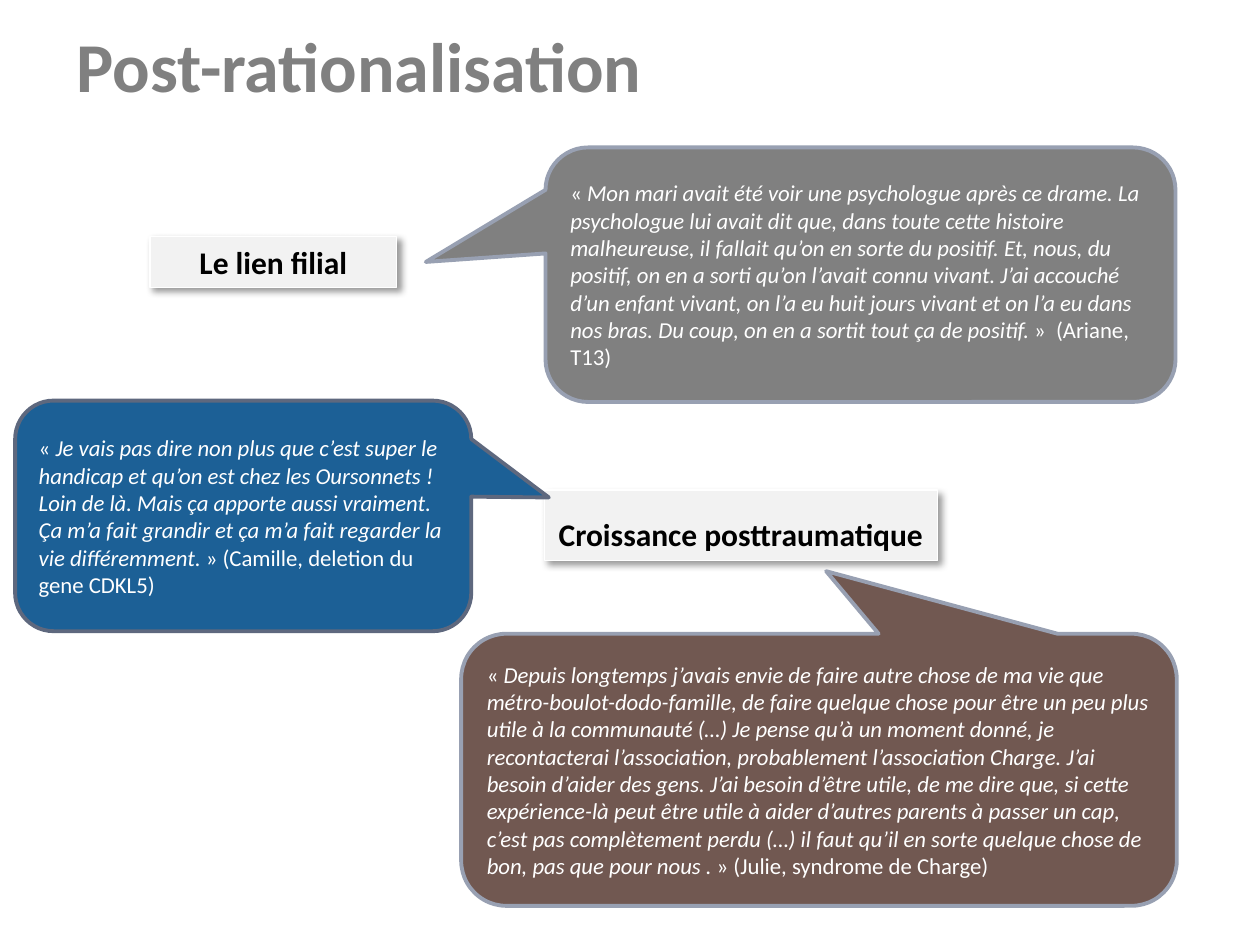
from lxml import etree
from pptx import Presentation
from pptx.dml.color import RGBColor
from pptx.enum.shapes import MSO_SHAPE
from pptx.enum.text import MSO_ANCHOR, MSO_AUTO_SIZE, PP_ALIGN
from pptx.oxml import parse_xml
from pptx.oxml.ns import nsdecls
from pptx.util import Inches, Pt

RECTANGLE = MSO_SHAPE.RECTANGLE
CALLOUT = MSO_SHAPE.ROUNDED_RECTANGULAR_CALLOUT
TOP, MIDDLE = MSO_ANCHOR.TOP, MSO_ANCHOR.MIDDLE
LEFT, CENTER = PP_ALIGN.LEFT, PP_ALIGN.CENTER
NO_AUTOFIT, GROW = MSO_AUTO_SIZE.NONE, MSO_AUTO_SIZE.SHAPE_TO_FIT_TEXT

FONT = "Calibri"
WHITE = RGBColor(0xFF, 0xFF, 0xFF)
BLACK = RGBColor(0x00, 0x00, 0x00)
GRAY = RGBColor(0x80, 0x80, 0x80)
LIGHT_GRAY = RGBColor(0xF2, 0xF2, 0xF2)
BLUE = RGBColor(0x1C, 0x60, 0x96)
BROWN = RGBColor(0x71, 0x58, 0x51)
PALE_BORDER = RGBColor(0x98, 0xA0, 0xB2)
DARK_BORDER = RGBColor(0x5E, 0x68, 0x7E)

LABELS = [
    ("Le lien filial", (1.19, 1.88, 1.96, 0.4), 1, True),
    ("Croissance posttraumatique", (4.32, 3.89, 3.12, 0.56), 1.5, False),
]

# Quote, source, box, pointer tip, fill, border
QUOTES = [
    ("Mon mari avait été voir une psychologue après ce drame. La psychologue lui avait "
     "dit que, dans toute cette histoire malheureuse, il fallait qu’on en sorte du "
     "positif. Et, nous, du positif, on en a sorti qu’on l’avait connu vivant. J’ai "
     "accouché d’un enfant vivant, on l’a eu huit jours vivant et on l’a eu dans nos "
     "bras. Du coup, on en a sortit tout ça de positif.",
     " »  (Ariane, T13)",
     (4.33, 1.17, 5, 2.02), (-0.69, -0.05), GRAY, PALE_BORDER),
    ("Je vais pas dire non plus que c’est super le handicap et qu’on est chez les "
     "Oursonnets ! Loin de là. Mais ça apporte aussi vraiment. Ça m’a fait grandir et "
     "ça m’a fait regarder la vie différemment.",
     " » (Camille, deletion du gene CDKL5)",
     (0.12, 3.18, 3.62, 1.83), (0.67, -0.08), BLUE, DARK_BORDER),
    ("Depuis longtemps j’avais envie de faire autre chose de ma vie que "
     "métro-boulot-dodo-famille, de faire quelque chose pour être un peu plus utile à "
     "la communauté (…) Je pense qu’à un moment donné, je recontacterai l’association, "
     "probablement l’association Charge. J’ai besoin d’aider des gens. J’ai besoin "
     "d’être utile, de me dire que, si cette expérience-là peut être utile à aider "
     "d’autres parents à passer un cap, c’est pas complètement perdu (…) il faut qu’il "
     "en sorte quelque chose de bon, pas que pour nous .",
     " » (Julie, syndrome de Charge)",
     (3.66, 5.03, 5.68, 2.16), (0.01, -0.73), BROWN, PALE_BORDER),
]


def write_text(shape, runs, size, color, bold=False, align=LEFT, anchor=TOP,
               spacing=1, wrap=True, autofit=NO_AUTOFIT):
    """Fill a shape with one paragraph made of (text, italic) runs."""
    frame = shape.text_frame
    frame.word_wrap = wrap
    frame.auto_size = autofit
    frame.vertical_anchor = anchor
    paragraph = frame.paragraphs[0]
    paragraph.alignment = align
    paragraph.line_spacing = spacing
    for text, italic in runs:
        run = paragraph.add_run()
        run.text = text
        font = run.font
        font.name, font.size = FONT, Pt(size)
        font.bold, font.italic = bold, italic
        font.color.rgb = color


def add_box(slide, kind, box, fill, border, border_width):
    shape = slide.shapes.add_shape(kind, *map(Inches, box))
    shape.shadow.inherit = False
    shape.fill.solid()
    shape.fill.fore_color.rgb = fill
    shape.line.color.rgb = border
    shape.line.width = Pt(border_width)
    return shape


def add_drop_shadow(shape):
    effects = shape._element.spPr.find("{*}effectLst")
    shadow = parse_xml(
        f'<a:outerShdw {nsdecls("a")} blurRad="{Pt(4)}" dist="{Pt(3)}" dir="2700000" '
        'algn="tl" rotWithShape="0"/>')
    color = etree.SubElement(shadow, shadow.tag.replace("outerShdw", "srgbClr"), val="000000")
    etree.SubElement(color, shadow.tag.replace("outerShdw", "alpha"), val="40000")
    effects.append(shadow)


def add_label(slide, text, box, spacing, wrap):
    shape = add_box(slide, RECTANGLE, box, LIGHT_GRAY, WHITE, 0.75)
    add_drop_shadow(shape)
    write_text(shape, [(text, False)], 18, BLACK, bold=True, align=CENTER,
               spacing=spacing, wrap=wrap, autofit=GROW)


def add_quote(slide, quote, source, box, tip, fill, border):
    shape = add_box(slide, CALLOUT, box, fill, border, 2.22)
    shape.adjustments[0], shape.adjustments[1] = tip
    write_text(shape, [("« ", False), (quote, True), (source, False)], 13, WHITE,
               anchor=MIDDLE)


def set_title(slide, text):
    title = slide.shapes.title
    title.left, title.top, title.width, title.height = map(Inches, (0.51, 0.13, 9.49, 1.25))
    write_text(title, [(text, False)], 40, GRAY, bold=True)


def main():
    presentation = Presentation()
    presentation.slide_width, presentation.slide_height = Inches(10), Inches(7.5)
    slide = presentation.slides.add_slide(presentation.slide_layouts[5])
    set_title(slide, "Post-rationalisation")
    for label in LABELS:
        add_label(slide, *label)
    for quote in QUOTES:
        add_quote(slide, *quote)
    presentation.save("out.pptx")


if __name__ == "__main__":
    main()
